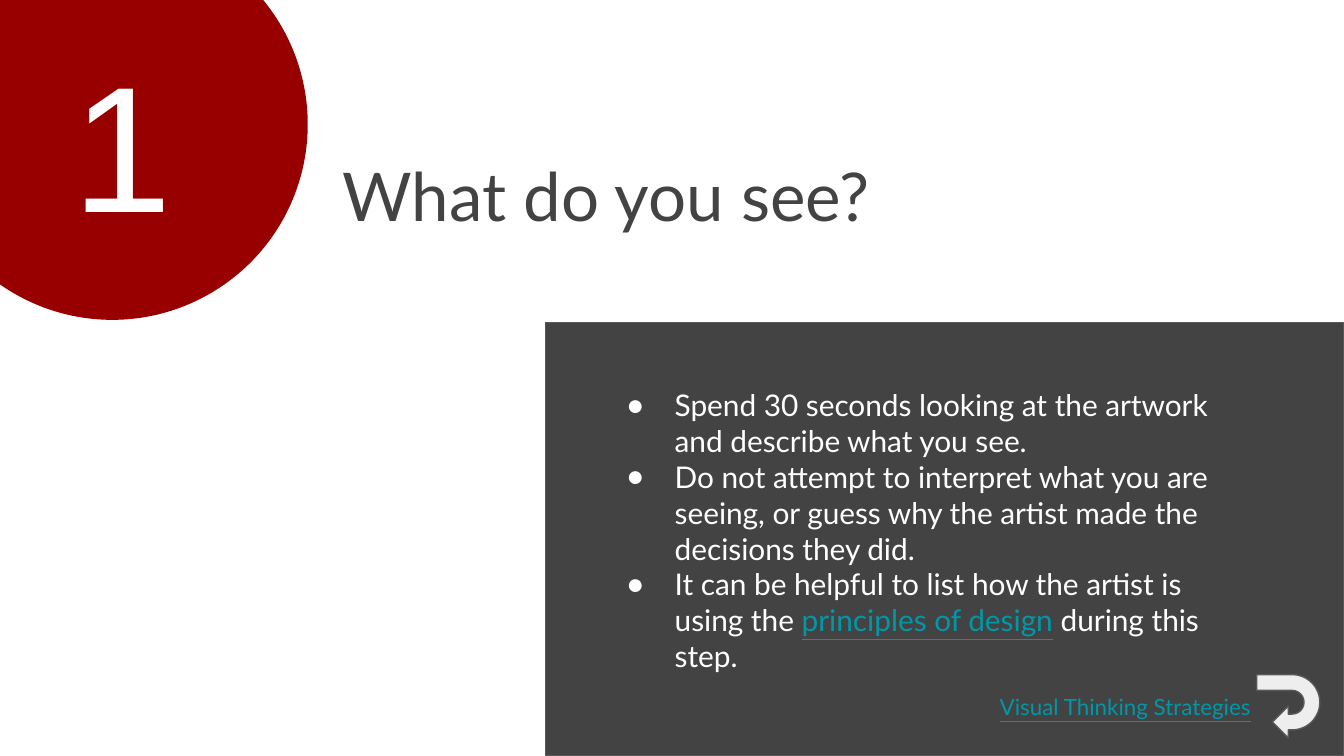
from dataclasses import dataclass

from lxml import etree
from pptx import Presentation
from pptx.dml.color import RGBColor
from pptx.enum import shapes, text
from pptx.oxml import ns
from pptx.util import Inches, Pt


@dataclass(frozen=True)
class Theme:
    red: str = "980000"
    dark: str = "434343"
    outline: str = "595959"
    light: str = "EEEEEE"
    white: str = "FFFFFF"
    link: str = "0097A7"
    font: str = "Lato"
    numeral_font: str = "Arial"
    numeral: int = 96
    title: int = 36
    body: int = 16
    small: int = 12


def apply(target, values):
    for name, value in values.items():
        setattr(target, name, value)


class SlideBuilder:
    def __init__(self, slide, theme):
        self.slide = slide
        self.theme = theme

    def shape(self, kind, box, fill, outline=None, rotation=0, adjustments=()):
        item = self.slide.shapes.add_shape(kind, *map(Inches, box))
        item.shadow.inherit = False
        item.rotation = rotation
        for index, value in enumerate(adjustments):
            item.adjustments[index] = value
        item.fill.solid()
        item.fill.fore_color.rgb = RGBColor.from_string(fill)
        if outline:
            item.line.color.rgb = RGBColor.from_string(outline)
            item.line.width = Pt(0.75)
        else:
            item.line.fill.background()

    def frame(self, item, top_inset=0.1):
        frame = item.text_frame
        side = Inches(0.1)
        apply(frame, {
            "word_wrap": True,
            "auto_size": text.MSO_AUTO_SIZE.NONE,
            "vertical_anchor": text.MSO_ANCHOR.TOP,
            "margin_left": side,
            "margin_right": side,
            "margin_top": Inches(top_inset),
            "margin_bottom": side,
        })
        return frame

    def run(self, paragraph, words, size, color, font=None, underline=False):
        run = paragraph.add_run()
        run.text = words
        apply(run.font, {
            "name": font or self.theme.font,
            "size": Pt(size),
            "underline": underline,
        })
        run.font.color.rgb = RGBColor.from_string(color)

    def label(self, box, words, size, color, **style):
        item = self.slide.shapes.add_textbox(*map(Inches, box))
        self.run(self.frame(item).paragraphs[0], words, size, color, **style)

    def placeholder(self, item, box):
        names = ("left", "top", "width", "height")
        apply(item, dict(zip(names, map(Inches, box))))
        self.slide.shapes._spTree.append(item._element)

    def title(self, box, words):
        item = self.slide.shapes.title
        self.placeholder(item, box)
        paragraph = self.frame(item).paragraphs[0]
        paragraph.alignment = text.PP_ALIGN.LEFT
        self.run(paragraph, words, self.theme.title, self.theme.dark)

    def bullet(self, paragraph):
        properties = paragraph._p.get_or_add_pPr()
        for name, value in {"marL": 0.5, "indent": -0.36}.items():
            properties.set(name, str(Inches(value)))
        color = etree.SubElement(properties, ns.qn("a:buClr"))
        etree.SubElement(color, ns.qn("a:srgbClr"), val=self.theme.white)
        etree.SubElement(properties, ns.qn("a:buChar"), char="●")
        paragraph.space_before = Pt(0)

    def bullets(self, box, items, top_inset):
        body = self.slide.placeholders[1]
        self.placeholder(body, box)
        frame = self.frame(body, top_inset)
        for index, parts in enumerate(items):
            paragraph = frame.add_paragraph() if index else frame.paragraphs[0]
            self.bullet(paragraph)
            for words, linked in parts:
                color = self.theme.link if linked else self.theme.white
                self.run(paragraph, words, self.theme.body, color, underline=linked)


def main():
    deck = Presentation()
    deck.slide_width = Inches(10)
    deck.slide_height = deck.slide_width * 9 // 16
    theme = Theme()
    builder = SlideBuilder(deck.slides.add_slide(deck.slide_layouts[1]), theme)
    kinds = shapes.MSO_SHAPE

    builder.shape(kinds.OVAL, (-0.62, -0.53, 2.91, 2.91), theme.red)
    builder.shape(kinds.RECTANGLE, (4.06, 2.4, 5.94, 3.22), theme.dark, theme.outline)

    instructions = [
        [("Spend 30 seconds looking at the artwork and describe what you see.", False)],
        [("Do not attempt to interpret what you are seeing, or guess why the artist "
          "made the decisions they did.", False)],
        [("It can be helpful to list how the artist is using the ", False),
         ("principles of design", True),
         (" during this step.", False)],
    ]
    builder.bullets((4.42, 2.58, 4.93, 2.32), instructions, top_inset=0.3)
    builder.title((2.45, 1.05, 4.37, 0.87), "What do you see?")
    builder.label((0.44, 0.15, 2.14, 2.32), "1", theme.numeral, theme.white,
                  font=theme.numeral_font)
    builder.shape(kinds.U_TURN_ARROW, (9.35, 5.02, 0.47, 0.47), theme.light,
                  theme.outline, rotation=90,
                  adjustments=(0.25, 0.25, 0.25, 0.44, 0.75))
    builder.label((7.34, 5.06, 2.4, 0.38), "Visual Thinking Strategies",
                  theme.small, theme.link, underline=True)

    deck.save("out.pptx")


if __name__ == "__main__":
    main()
